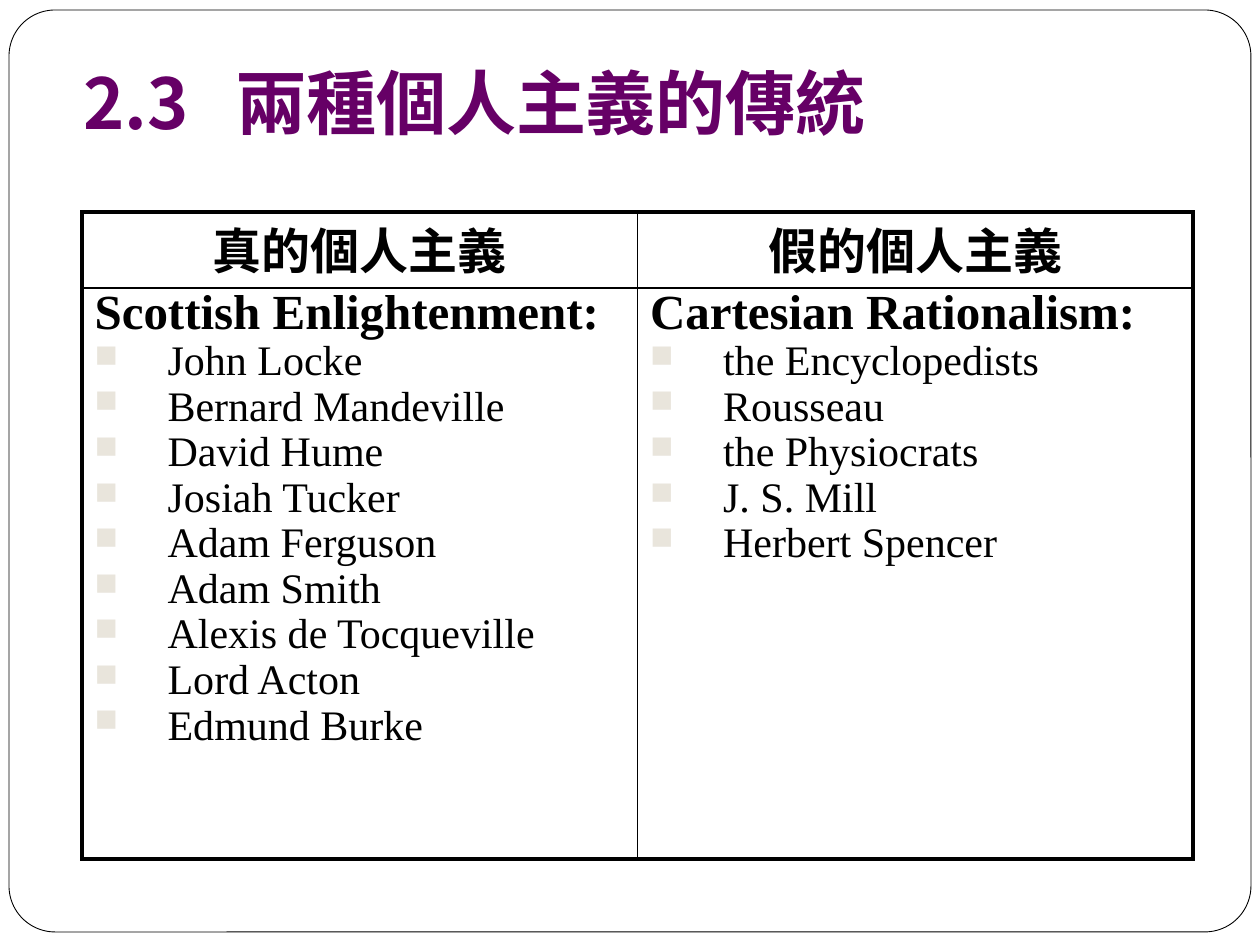
"""Build the slide comparing two traditions of individualism."""
from dataclasses import dataclass

from lxml.etree import SubElement
from pptx import Presentation
from pptx.dml.color import RGBColor
from pptx.enum.shapes import MSO_SHAPE
from pptx.enum.text import MSO_ANCHOR, PP_ALIGN
from pptx.oxml.ns import qn
from pptx.util import Emu, Pt

PX_PER_INCH = 126
BLACK = RGBColor(0x00, 0x00, 0x00)
WHITE = RGBColor(0xFF, 0xFF, 0xFF)
PURPLE = RGBColor(0x66, 0x00, 0x66)
BULLET = RGBColor(0xE9, 0xE5, 0xDC)
CHINESE = "Noto Sans CJK TC"
LATIN = "Times New Roman"
OUTER, INNER = 2.25, 1
INDENT = 73


@dataclass(frozen=True)
class TextFormat:
    font: str
    size: int
    bold: bool
    color: RGBColor = BLACK


@dataclass(frozen=True)
class Tradition:
    heading: str
    source: str
    thinkers: tuple[str, ...]


TITLE = TextFormat(CHINESE, 40, True, PURPLE)
HEADING = TextFormat(CHINESE, 28, True)
SOURCE = TextFormat(LATIN, 28, True)
THINKER = TextFormat(LATIN, 24, False)

TRADITIONS = (
    Tradition("真的個人主義", "Scottish Enlightenment:", (
        "John Locke", "Bernard Mandeville", "David Hume", "Josiah Tucker",
        "Adam Ferguson", "Adam Smith", "Alexis de Tocqueville",
        "Lord Acton", "Edmund Burke")),
    Tradition("假的個人主義", "Cartesian Rationalism:", (
        "the Encyclopedists", "Rousseau", "the Physiocrats",
        "J. S. Mill", "Herbert Spencer")),
)


def px(length: int) -> Emu:
    return Emu(round(length * 914400 / PX_PER_INCH))


def add_element(parent, tag: str, **attributes):
    return SubElement(parent, qn(tag), {key: str(value) for key, value in attributes.items()})


def write(paragraph, text: str, text_format: TextFormat) -> None:
    run = paragraph.add_run()
    run.text = text
    values = {"name": text_format.font, "size": Pt(text_format.size), "bold": text_format.bold}
    for name, value in values.items():
        setattr(run.font, name, value)
    run.font.color.rgb = text_format.color
    add_element(run.font._element, "a:ea", typeface=text_format.font)


def space_lines(paragraph, line_spacing: float):
    paragraph.line_spacing = line_spacing
    properties = paragraph._p.get_or_add_pPr()
    before = add_element(properties, "a:spcBef")
    add_element(before, "a:spcPct", val=20000)
    return properties


def add_list_line(paragraph, text: str, text_format: TextFormat, bulleted: bool) -> None:
    properties = space_lines(paragraph, 0.8)
    properties.set("marL", str(px(INDENT)))
    properties.set("indent", str(-px(INDENT)))
    if bulleted:
        add_element(add_element(properties, "a:buClr"), "a:srgbClr", val=BULLET)
        add_element(properties, "a:buSzPct", val=75000)
        add_element(properties, "a:buChar", char="■")
    else:
        add_element(properties, "a:buNone")
    write(paragraph, text, text_format)


def draw_borders(cell, row: int, column: int) -> None:
    outer_sides = {"a:lnL": column == 0, "a:lnR": column == 1,
                   "a:lnT": row == 0, "a:lnB": row == 1}
    properties = cell._tc.get_or_add_tcPr()
    for side, outer in outer_sides.items():
        line = add_element(properties, side, w=Pt(OUTER if outer else INNER))
        add_element(add_element(line, "a:solidFill"), "a:srgbClr", val=BLACK)
    cell.fill.background()


def add_frame(slide) -> None:
    shape = slide.shapes.add_shape(
        MSO_SHAPE.ROUNDED_RECTANGLE, px(9), px(10), px(1242), px(922))
    shape.adjustments[0] = 0.05
    shape.shadow.inherit = False
    shape.fill.solid()
    shape.fill.fore_color.rgb = WHITE
    shape.line.color.rgb = BLACK
    shape.line.width = Pt(0.5)


def add_title(slide) -> None:
    text_frame = slide.shapes.add_textbox(px(71), px(47), px(1134), px(110)).text_frame
    values = {"word_wrap": True, "vertical_anchor": MSO_ANCHOR.BOTTOM, "margin_bottom": px(13)}
    for name, value in values.items():
        setattr(text_frame, name, value)
    paragraph = text_frame.paragraphs[0]
    tabs = add_element(paragraph._p.get_or_add_pPr(), "a:tabLst")
    add_element(tabs, "a:tab", pos=px(153), algn="l")
    write(paragraph, "2.3\t兩種個人主義的傳統", TITLE)


def add_comparison(slide) -> None:
    table = slide.shapes.add_table(
        2, len(TRADITIONS), px(82), px(212), px(1111), px(647)).table
    table.first_row = table.horz_banding = False
    table.rows[0].height, table.rows[1].height = px(76), px(571)
    for column, tradition in enumerate(TRADITIONS):
        heading_cell, list_cell = table.cell(0, column), table.cell(1, column)
        heading = heading_cell.text_frame.paragraphs[0]
        heading.alignment = PP_ALIGN.CENTER
        space_lines(heading, 0.9)
        write(heading, tradition.heading, HEADING)
        text_frame = list_cell.text_frame
        add_list_line(text_frame.paragraphs[0], tradition.source, SOURCE, False)
        for thinker in tradition.thinkers:
            add_list_line(text_frame.add_paragraph(), thinker, THINKER, True)
        for row, cell in enumerate((heading_cell, list_cell)):
            draw_borders(cell, row, column)


def main() -> None:
    presentation = Presentation()
    presentation.slide_width, presentation.slide_height = px(1260), px(945)
    slide = presentation.slides.add_slide(presentation.slide_layouts[6])
    add_frame(slide)
    add_title(slide)
    add_comparison(slide)
    presentation.save("out.pptx")


if __name__ == "__main__":
    main()
